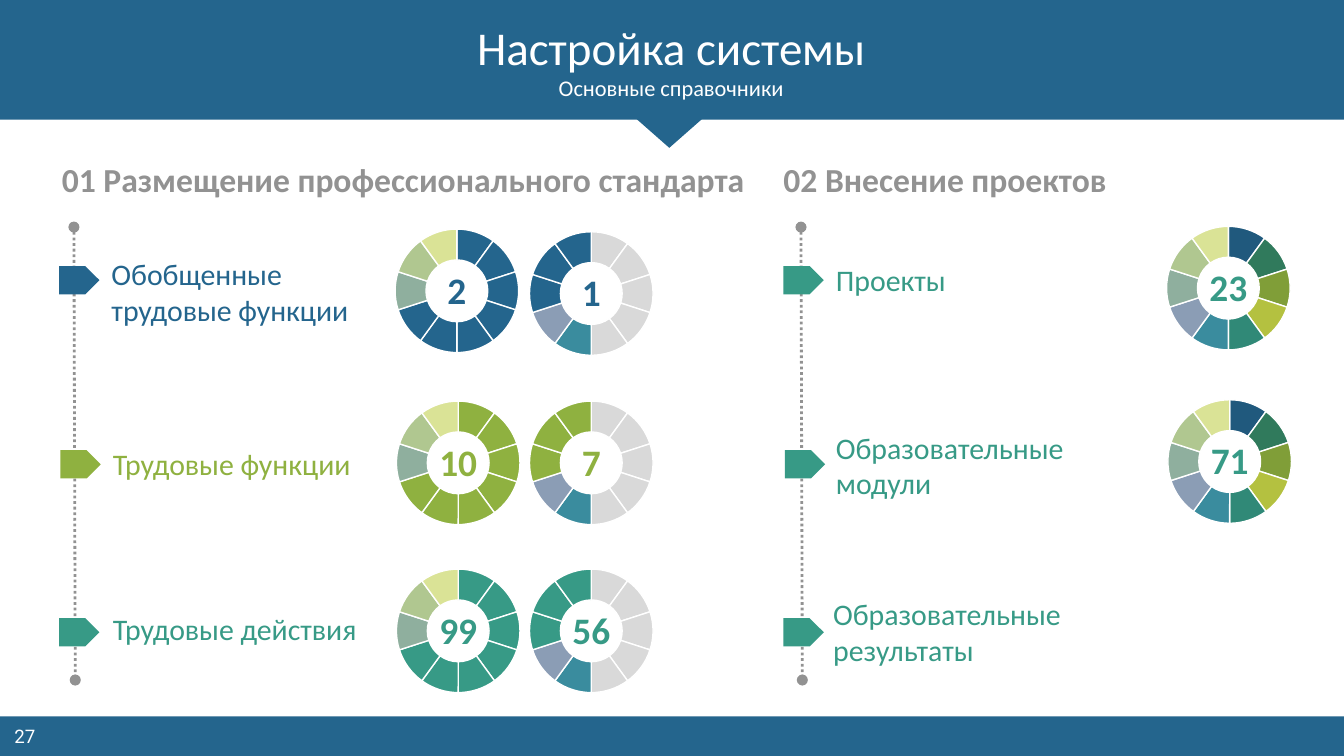
"""Build the slide on the main reference lists of the system."""
from lxml import etree
from pptx import Presentation
from pptx.chart.data import CategoryChartData as ChartData
from pptx.dml.color import RGBColor
from pptx.enum.chart import XL_CHART_TYPE as Chart
from pptx.enum.dml import MSO_LINE as Dash
from pptx.enum.shapes import MSO_CONNECTOR as Link, MSO_SHAPE as Shape
from pptx.enum.text import MSO_ANCHOR as Anchor, MSO_AUTO_SIZE as Fit, PP_ALIGN as Align
from pptx.oxml.ns import qn
from pptx.util import Inches, Pt

WHITE = RGBColor(0xFF, 0xFF, 0xFF)
DARK = RGBColor(0x26, 0x26, 0x26)
GREY = RGBColor(0x92, 0x92, 0x92)
PALE = RGBColor(0xD9, 0xD9, 0xD9)
BLUE = RGBColor(0x24, 0x65, 0x8D)
LIME = RGBColor(0x8F, 0xB1, 0x40)
TEAL = RGBColor(0x37, 0x9A, 0x86)
SEA = RGBColor(0x3A, 0x8C, 0x9E)
MIST = RGBColor(0x8B, 0x9D, 0xB5)
FADED = [RGBColor(0x8F, 0xAF, 0x9E), RGBColor(0xB0, 0xC7, 0x90), RGBColor(0xDA, 0xE3, 0x96)]
DEEP = [RGBColor(0x20, 0x59, 0x7D), RGBColor(0x30, 0x7A, 0x5C), RGBColor(0x80, 0x9E, 0x38),
        RGBColor(0xB4, 0xC1, 0x40), RGBColor(0x30, 0x89, 0x77), SEA]
MIXED = DEEP + [MIST] + FADED

TITLE = "Настройка системы"
SUB = "Основные справочники"
PAGE = "27"
HEADS = [("01 Размещение профессионального стандарта", 0.46, 5.38),
         ("02 Внесение проектов", 5.83, 2.57)]
LABELS = [("Обобщенные трудовые функции", 0.83, 2.17, 2.13, 0.54, BLUE),
          ("Трудовые функции", 0.84, 3.45, 1.94, 0.27, LIME),
          ("Трудовые действия", 0.84, 4.68, 1.93, 0.27, TEAL),
          ("Проекты", 6.22, 2.08, 1.65, 0.27, TEAL),
          ("Образовательные модули", 6.22, 3.46, 2.09, 0.54, TEAL),
          ("Образовательные результаты", 6.2, 4.7, 2.3, 0.54, TEAL)]
TAGS = [(0.44, 1.98, BLUE), (0.45, 3.35, LIME), (0.44, 4.6, TEAL),
        (5.83, 1.98, TEAL), (5.84, 3.35, TEAL), (5.83, 4.6, TEAL)]


def most(hue):
    return [hue] * 7 + FADED


def part(hue):
    return [PALE] * 5 + [SEA, MIST] + [hue] * 3


RINGS = [("2", 2.8, 1.53, 0.23, BLUE, most(BLUE)),
         ("1", 3.8, 1.55, 0.23, BLUE, part(BLUE)),
         ("10", 2.81, 2.81, 0.36, LIME, most(LIME)),
         ("7", 3.8, 2.81, 0.23, LIME, part(LIME)),
         ("99", 2.81, 4.06, 0.36, TEAL, most(TEAL)),
         ("56", 3.8, 4.06, 1.52, TEAL, part(TEAL)),
         ("23", 8.54, 1.51, 1.69, TEAL, MIXED),
         ("71", 8.55, 2.8, 0.36, TEAL, MIXED)]
WIDE, HIGH, DIAM = 1.2, 1.27, 0.92

deck = Presentation()
deck.slide_width = Inches(10)
deck.slide_height = deck.slide_width * 9 // 16
slide = deck.slides.add_slide(deck.slide_layouts[1])
shapes = slide.shapes


def box(*spot):
    return [Inches(n) for n in spot]


def write(text, spot, size=16, color=WHITE, font="Calibri", bold=False,
          align=Align.LEFT, anchor=Anchor.MIDDLE, wrap=True, holder=None):
    item = holder or shapes.add_textbox(*box(*spot))
    item.left, item.top, item.width, item.height = box(*spot)
    frame = item.text_frame
    frame.auto_size, frame.word_wrap, frame.vertical_anchor = Fit.NONE, wrap, anchor
    frame.margin_left = frame.margin_right = frame.margin_top = frame.margin_bottom = 0
    para = frame.paragraphs[0]
    para.alignment, para.space_before = align, Pt(0)
    run = para.add_run()
    run.text = text
    face = run.font
    face.name, face.size, face.bold, face.color.rgb = font, Pt(size), bold, color
    return item


def block(kind, spot, color):
    item = shapes.add_shape(kind, *box(*spot))
    item.shadow.inherit = False
    item.fill.solid()
    item.fill.fore_color.rgb = color
    item.line.fill.background()
    return item


def rail(left):
    line = shapes.add_connector(Link.STRAIGHT, *box(left, 1.69, left + 0.01, 5.06))
    line.line.color.rgb, line.line.width = GREY, Pt(1.5)
    line.line.dash_style = Dash.ROUND_DOT
    pen = line.line._get_or_add_ln()
    for end in ("a:headEnd", "a:tailEnd"):
        etree.SubElement(pen, qn(end), type="oval")
    etree.SubElement(line._element.spPr, qn("a:effectLst"))


def ring(left, top, hues):
    data = ChartData()
    data.categories = [str(n + 1) for n in range(len(hues))]
    data.add_series("Series 1", [10] * len(hues))
    chart = shapes.add_chart(Chart.DOUGHNUT, *box(left, top, WIDE, HIGH), data).chart
    chart.has_legend = chart.has_title = False
    chart.font.name, chart.font.size, chart.font.color.rgb = "Calibri", Pt(18), DARK
    plot = chart.plots[0]
    plot.vary_by_categories = True
    plot._element.find(qn("c:holeSize")).set("val", "54")
    for n, hue in enumerate(hues):
        look = plot.series[0].points[n].format
        look.fill.solid()
        look.fill.fore_color.rgb = hue
        look.line.color.rgb, look.line.width = WHITE, Pt(0.75)
    area = chart._chartSpace.chart.plotArea
    for old in area.findall(qn("c:layout")):
        area.remove(old)
    layout = etree.Element(qn("c:layout"))
    area.insert(0, layout)
    manual = etree.SubElement(layout, qn("c:manualLayout"))
    w, h = DIAM / WIDE, DIAM / HIGH
    rules = [("layoutTarget", "inner"), ("xMode", "edge"), ("yMode", "edge"),
             ("x", (1 - w) / 2), ("y", (1 - h) / 2), ("w", w), ("h", h)]
    for name, val in rules:
        etree.SubElement(manual, qn("c:" + name), val=str(val))


block(Shape.RECTANGLE, (0, 5.33, 10, 0.3), BLUE)
write(PAGE, (0.02, 5.39, 0.33, 0.17), size=10, font="Roboto", align=Align.CENTER)
block(Shape.RECTANGLE, (0, 0, 10, 0.89), BLUE)
block(Shape.ISOSCELES_TRIANGLE, (4.73, 0.88, 0.5, 0.22), BLUE).rotation = 180

title, body = shapes.title, slide.placeholders[1]
write(TITLE, (0.43, 0.14, 9.13, 0.37), size=25.2, align=Align.CENTER,
      anchor=Anchor.TOP, holder=title)
write(SUB, (0.43, 0.56, 9.13, 0.19), size=12, align=Align.CENTER, wrap=False, holder=body)
props = body.text_frame.paragraphs[0]._p.get_or_add_pPr()
props.set("marL", "0")
props.set("indent", "0")
etree.SubElement(props, qn("a:buNone"))
for holder in (body, title):
    shapes._spTree.append(holder._element)

for text, left, width in HEADS:
    write(text, (left, 1.18, width, 0.3), size=18, color=GREY, bold=True)
for left in (0.55, 5.96):
    rail(left)
for left, top, hue in TAGS:
    block(Shape.PENTAGON, (left, top, 0.3, 0.21), hue)
for text, left, mid, width, high, hue in LABELS:
    write(text, (left, mid - high / 2, width, high), color=hue)
for text, left, top, width, hue, hues in RINGS:
    ring(left, top, hues)
    write(text, (left + (WIDE - width) / 2, top + HIGH / 2 - 0.18, width, 0.34),
          size=20, color=hue, bold=True, align=Align.CENTER, anchor=Anchor.TOP)

deck.save("out.pptx")
